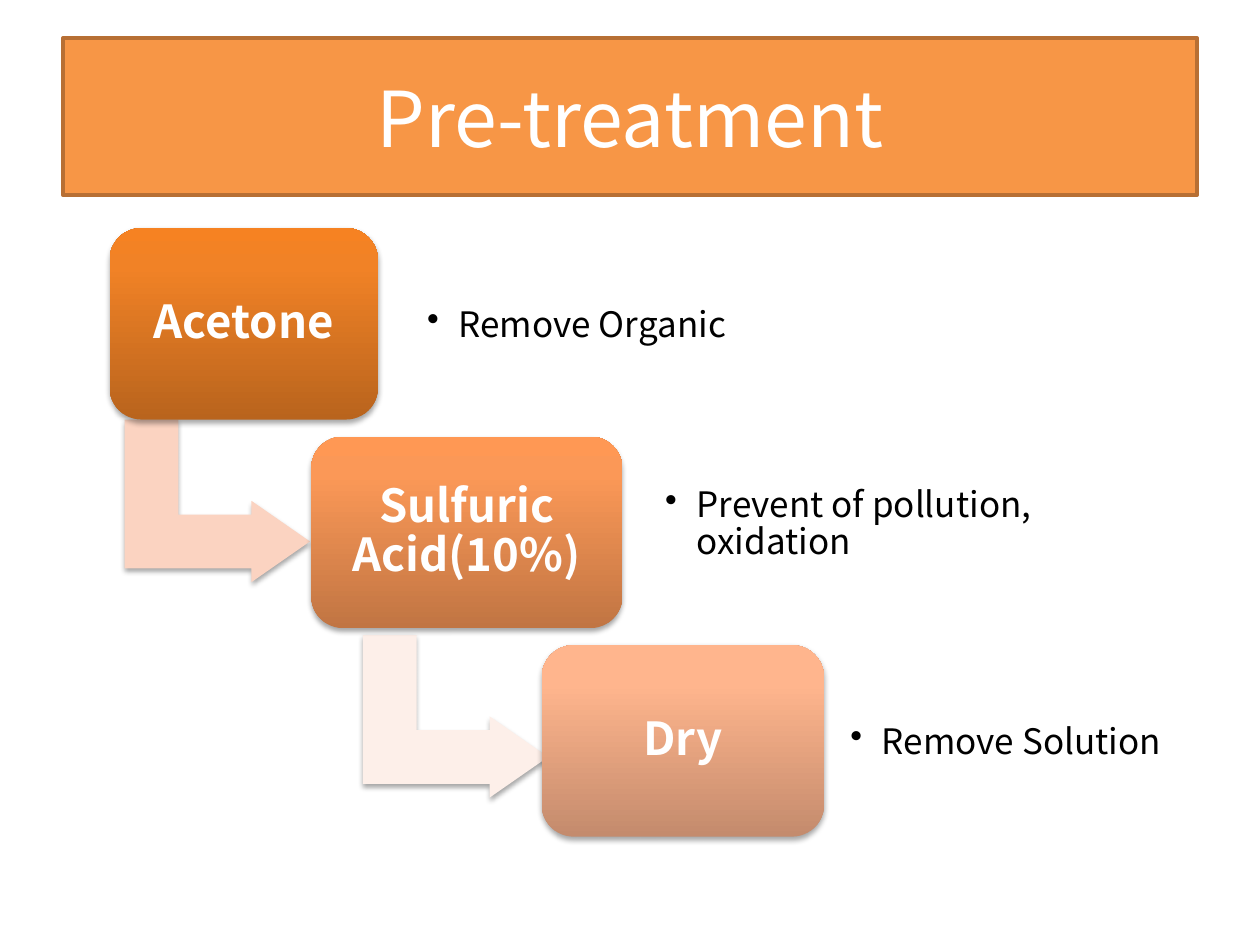
from copy import deepcopy
from lxml.etree import SubElement
from pptx import Presentation
from pptx.dml.color import RGBColor
from pptx.enum.shapes import MSO_SHAPE as SHAPE
from pptx.enum.text import MSO_ANCHOR as ANCHOR, PP_ALIGN as ALIGN
from pptx.oxml.ns import qn
from pptx.util import Inches, Pt


def rgb(value):
    return RGBColor.from_string(value)


def write(sp, text, size, color, bold=False, inset=0.11, spacing=0.9, align=ALIGN.CENTER):
    tf = sp.text_frame
    tf.word_wrap = True
    tf.vertical_anchor = ANCHOR.MIDDLE
    tf.margin_left = tf.margin_right = tf.margin_top = tf.margin_bottom = Inches(inset)
    p = tf.paragraphs[0]
    p.text = text
    p.alignment = align
    p.line_spacing = spacing
    p.font.name = "Noto Sans CJK KR"
    p.font.size = Pt(size)
    p.font.bold = bold
    p.font.color.rgb = rgb(color)
    return p


prs = Presentation()
prs.slide_width, prs.slide_height = Inches(10), Inches(7.5)
s = prs.slides.add_slide(prs.slide_layouts[6])

title = s.shapes.add_shape(SHAPE.RECTANGLE, Inches(0.5), Inches(0.3), Inches(9), Inches(1.25))
title.shadow.inherit = False
title.fill.solid()
title.fill.fore_color.rgb = rgb("F79646")
title.line.color.rgb = rgb("B76F34")
title.line.width = Pt(2)
write(title, "Pre-treatment", 44, "FFFFFF", spacing=1.0)

steps = [
    ("Acetone", 0.87, 2.13, ("B9641D", "F18226", "F68222"),
     "Remove Organic", 3.28, 1.97, 2.65, 0.11, (1.08, 3.24, "FBD3C1")),
    ("Sulfuric Acid(10%)", 2.47, 2.47, ("C17543", "FB9857", "FF9854"),
     "Prevent of pollution, oxidation", 5.17, 3.55, 3.64, 0.11, (2.97, 4.95, "FDEFE9")),
    ("Dry", 4.3, 2.24, ("C48B6D", "FFB58D", "FFB68F"),
     "Remove Solution", 6.67, 5.28, 2.94, 0.08, None),
]

for i, (name, left, width, colors, note, note_left, note_top, note_width, inset, arrow) in enumerate(steps):
    shapes = []
    if arrow:
        x, y, color = arrow
        sp = s.shapes.add_shape(SHAPE.BENT_UP_ARROW, Inches(x), Inches(y), Inches(1.29), Inches(1.47))
        sp.rotation = 90
        for k, value in enumerate((0.33, 0.25, 0.36)):
            sp.adjustments[k] = value
        sp.fill.solid()
        sp.fill.fore_color.rgb = rgb(color)
        shapes.append(sp)

    box = s.shapes.add_shape(SHAPE.ROUNDED_RECTANGLE, Inches(left), Inches(1.81 + 1.655 * i),
                             Inches(width), Inches(1.52))
    box.fill.gradient()
    box.fill.gradient_angle = 90
    stop_list = box._element.spPr.find(qn("a:gradFill")).find(qn("a:gsLst"))
    stop_list.append(deepcopy(stop_list[-1]))
    for stop, position, color in zip(box.fill.gradient_stops, (0, 0.8, 1), colors):
        stop.position = position
        stop.color.rgb = rgb(color)
    write(box, name, 26, "FFFFFF", bold=True)
    shapes.append(box)

    for sp in shapes:
        sp.line.fill.background()
        sp.shadow.inherit = False
        effects = sp._element.spPr.find(qn("a:effectLst"))
        shadow = SubElement(effects, qn("a:outerShdw"), blurRad=str(Pt(3.1)), dist=str(Pt(1.8)),
                            dir="5400000", rotWithShape="0")
        black = SubElement(shadow, qn("a:srgbClr"), val="000000")
        SubElement(black, qn("a:alpha"), val="35000")

    tb = s.shapes.add_textbox(Inches(note_left), Inches(note_top), Inches(note_width), Inches(1.23))
    p = write(tb, note, 20, "000000", inset=inset, align=ALIGN.LEFT)
    p.level = 1
    pPr = p._p.get_or_add_pPr()
    pPr.set("marL", str(Inches(0.25)))
    pPr.set("indent", str(-Inches(0.25)))
    bullet = pPr.makeelement(qn("a:buChar"), {"char": "•"})
    pPr.find(qn("a:defRPr")).addprevious(bullet)

prs.save("out.pptx")
